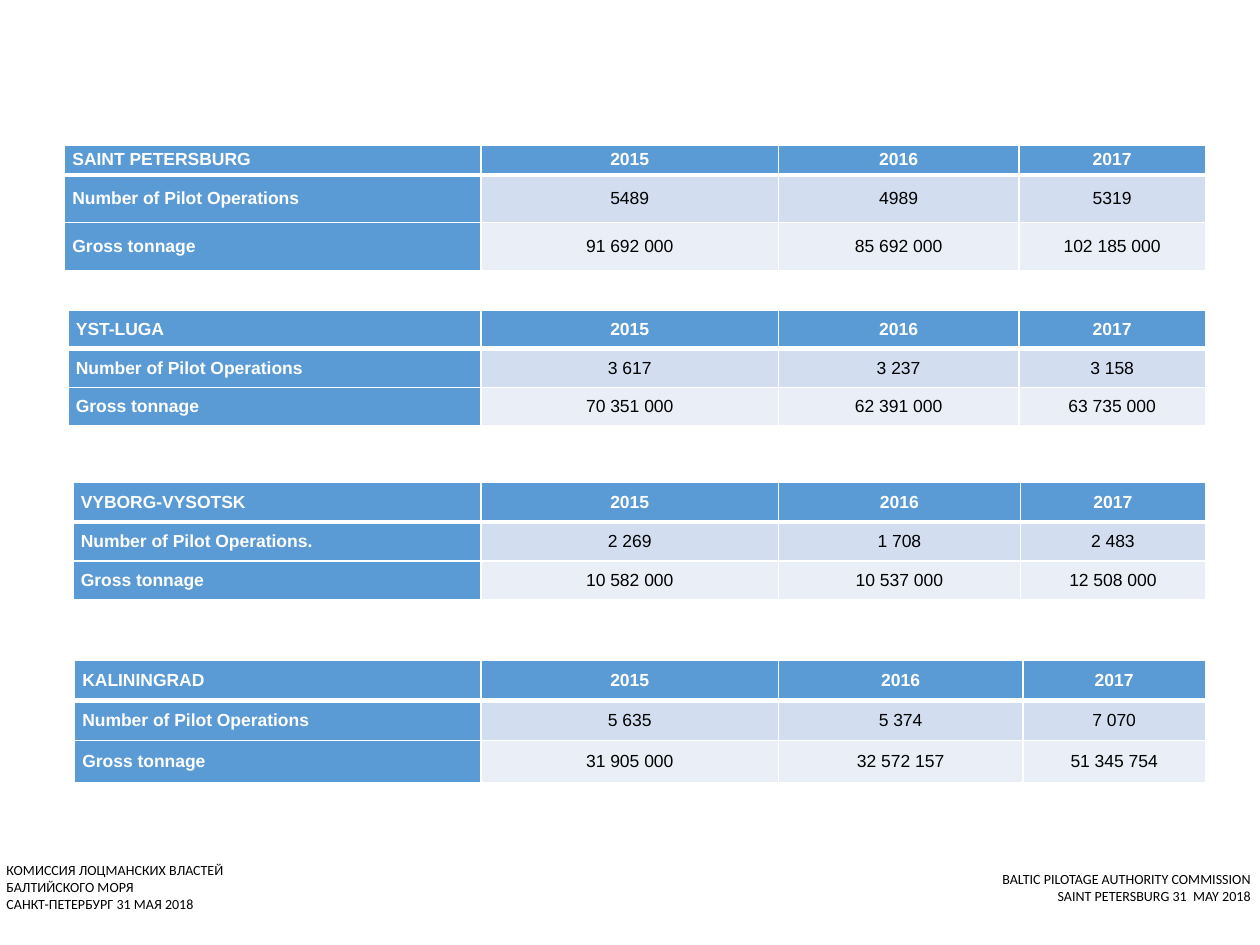
from lxml.etree import SubElement
from pptx import Presentation
from pptx.dml.color import RGBColor
from pptx.enum.text import MSO_ANCHOR as Anchor, PP_ALIGN as Align
from pptx.oxml.ns import qn
from pptx.util import Cm, Pt

COLORS = {
    "white": "FFFFFF",
    "black": "000000",
    "heading": "5B9BD5",
    "operations": "D2DEEF",
    "tonnage": "EAEFF7",
}
YEARS = ["2015", "2016", "2017"]

# Centimetres; all port tables share these vertical lines.
YEARS_LEFT = 9.7
TABLE_RIGHT = 24.3
WIDTH_2015 = 5.99

PORTS = [
    dict(name="SAINT PETERSBURG", left=1.3, top=2.92, width_2016=4.85,
         heights=[0.61, 0.96, 0.96],
         operations=["5489", "4989", "5319"],
         tonnage=["91 692 000", "85 692 000", "102 185 000"]),
    dict(name="YST-LUGA", left=1.37, top=6.25, width_2016=4.85,
         heights=[0.78, 0.78, 0.77],
         operations=["3 617", "3 237", "3 158"],
         tonnage=["70 351 000", "62 391 000", "63 735 000"]),
    dict(name="VYBORG-VYSOTSK", left=1.47, top=9.73, width_2016=4.88,
         heights=[0.79, 0.79, 0.79],
         operations=["2 269", "1 708", "2 483"],
         tonnage=["10 582 000", "10 537 000", "12 508 000"],
         operations_label="Number of Pilot Operations."),
    dict(name="KALININGRAD", left=1.5, top=13.31, width_2016=4.93,
         heights=[0.81, 0.81, 0.84],
         operations=["5 635", "5 374", "7 070"],
         tonnage=["31 905 000", "32 572 157", "51 345 754"]),
]


def write_text(cell, text, size=10, font="Arial", color="black", bold=False,
               align=Align.LEFT, margin=0.16):
    """Write one paragraph per line of text, centred vertically in the cell."""
    cell.vertical_anchor = Anchor.MIDDLE
    cell.margin_left = cell.margin_right = Cm(margin)
    cell.margin_top = cell.margin_bottom = 0
    cell.text_frame.text = text
    for paragraph in cell.text_frame.paragraphs:
        paragraph.alignment = align
        for run in paragraph.runs:
            run.font.size = Pt(size)
            run.font.name = font
            run.font.bold = bold
            run.font.color.rgb = RGBColor.from_string(COLORS[color])


def style_cell(cell, fill, top=1, bottom=1):
    """Give the cell a solid fill and white borders, in points."""
    properties = cell._tc.get_or_add_tcPr()
    for side, width in dict(L=1, R=1, T=top, B=bottom).items():
        line = SubElement(properties, qn(f"a:ln{side}"), w=str(Pt(width)))
        solid = SubElement(line, qn("a:solidFill"))
        SubElement(solid, qn("a:srgbClr"), val=COLORS["white"])
    cell.fill.solid()
    cell.fill.fore_color.rgb = RGBColor.from_string(COLORS[fill])


def add_table(slide, left, top, widths, heights):
    table = slide.shapes.add_table(
        len(heights), len(widths), Cm(left), Cm(top),
        Cm(sum(widths)), Cm(sum(heights))).table
    table.first_row = table.horz_banding = False
    for column, width in zip(table.columns, widths):
        column.width = Cm(width)
    for row, height in zip(table.rows, heights):
        row.height = Cm(height)
    return table


def add_port_table(slide, name, left, top, width_2016, heights, operations,
                   tonnage, operations_label="Number of Pilot Operations"):
    width_2017 = TABLE_RIGHT - YEARS_LEFT - WIDTH_2015 - width_2016
    widths = [YEARS_LEFT - left, WIDTH_2015, width_2016, width_2017]
    table = add_table(slide, left, top, widths, heights)
    rows = [
        ("heading", [name, *YEARS]),
        ("operations", [operations_label, *operations]),
        ("tonnage", ["Gross tonnage", *tonnage]),
    ]
    for row, (row_fill, texts) in enumerate(rows):
        for column, text in enumerate(texts):
            is_heading = row == 0 or column == 0
            cell = table.cell(row, column)
            style_cell(cell, "heading" if is_heading else row_fill,
                       top=3 if row == 1 else 1,
                       bottom=3 if row == 0 else 1)
            write_text(cell, text, bold=is_heading,
                       color="white" if is_heading else "black",
                       align=Align.CENTER if column else Align.LEFT)


def add_footer(slide):
    table = add_table(slide, -0.05, 17.2, [10.39, 4.67, 10.39], [1.4])
    texts = [
        "КОМИССИЯ ЛОЦМАНСКИХ ВЛАСТЕЙ\nБАЛТИЙСКОГО МОРЯ\n"
        "САНКТ-ПЕТЕРБУРГ 31 МАЯ 2018",
        "",
        "BALTIC PILOTAGE AUTHORITY COMMISSION\nSAINT PETERSBURG 31  MAY 2018",
    ]
    for cell, text, align in zip(table.rows[0].cells, texts,
                                 [Align.LEFT, Align.CENTER, Align.RIGHT]):
        style_cell(cell, "white")
        write_text(cell, text, size=8, font="Calibri", align=align, margin=0.18)


def main():
    presentation = Presentation()
    presentation.slide_width, presentation.slide_height = Cm(25.4), Cm(19.05)
    blank_layout = presentation.slide_layouts[6]
    slide = presentation.slides.add_slide(blank_layout)
    add_footer(slide)
    for port in PORTS:
        add_port_table(slide, **port)
    presentation.save("out.pptx")


if __name__ == "__main__":
    main()
